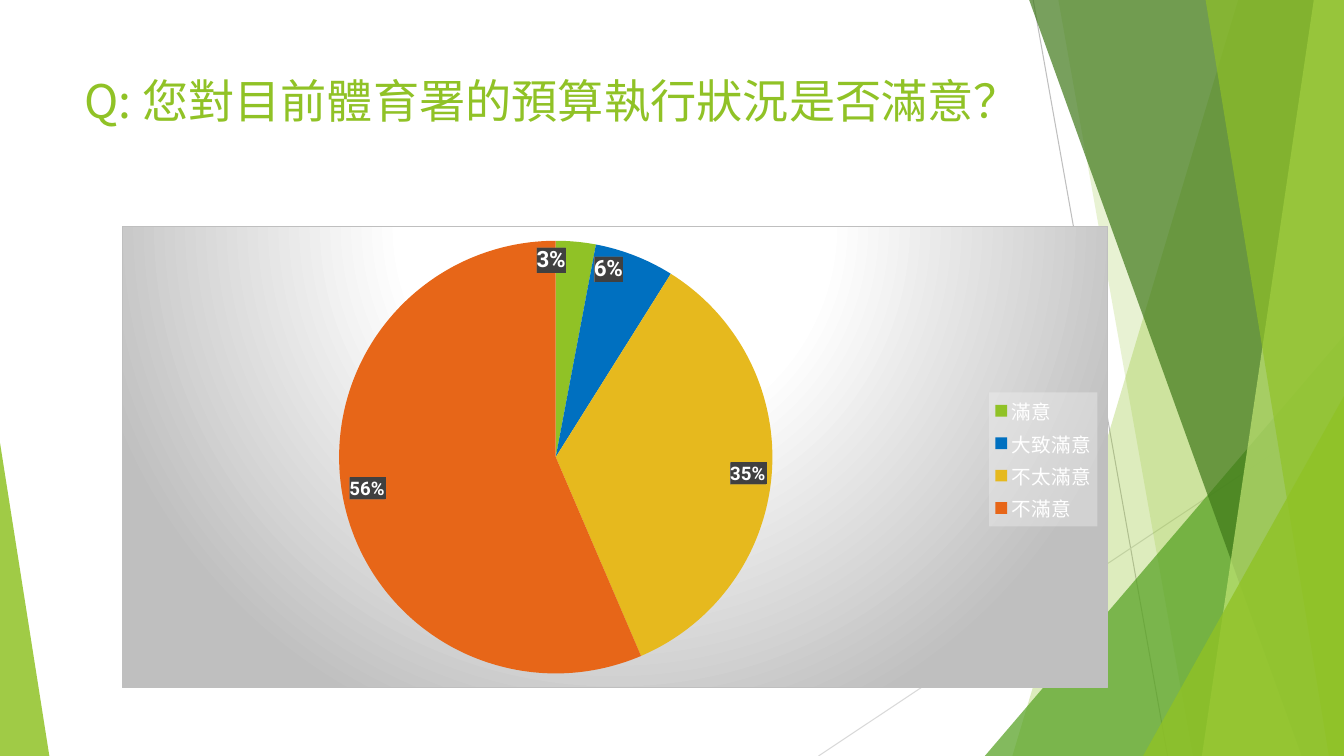
from dataclasses import dataclass

import lxml.etree
import pptx
import pptx.chart.data
import pptx.dml.color
import pptx.enum.chart
import pptx.enum.shapes
import pptx.enum.text
import pptx.oxml
import pptx.oxml.ns
import pptx.util

COLUMNS, ROWS = 40, 30
GREEN = "90C226"
LABEL_FONT = "Roboto"
TITLE_FONT = "Noto Sans CJK SC"
NAMESPACES = pptx.oxml.ns.nsdecls("c", "a")

presentation = pptx.Presentation()
presentation.slide_width = pptx.util.Inches(13.33)
presentation.slide_height = pptx.util.Inches(7.5)


@dataclass
class Ray:
    start: tuple[float, float]
    end: tuple[float, float]
    color: str


@dataclass
class Band:
    """A strip from a slanted left edge to the right side of the slide."""
    top_column: float
    bottom_column: float
    color: str
    opacity: int


@dataclass
class Corner:
    """A triangle whose tip stands at the given share of its width."""
    box: tuple[float, float, float, float]
    tip: float
    color: str
    opacity: int


@dataclass
class Answer:
    name: str
    percent: int
    color: str
    label_size: float
    label_shift: tuple[float, float] = (0, 0)


DECORATION = [
    Ray((30.75, 0), (34.75, 30), "BFBFBF"),
    Ray((40, 16.12), (24.36, 30), "D9D9D9"),
    Band(36.85, 30.13, GREEN, 30),
    Band(31.5, 35.5, GREEN, 20),
    Corner((29.31, 13.32, 10.69, 16.68), 1, "54A021", 72),
    Band(30.63, 38.74, "3F7819", 70),
    Band(39.1, 35.77, "C0E474", 70),
    Band(35.88, 39.55, GREEN, 65),
    Corner((34.02, 15.72, 5.98, 14.28), 1, GREEN, 80),
    Corner((0, 17.56, 1.47, 12.44), 0, GREEN, 85),
]
ANSWERS = [
    Answer("滿意", 3, GREEN, 16, (-0.01, 0)),
    Answer("大致滿意", 6, "0070C0", 16, (-0.01, -0.01)),
    Answer("不太滿意", 35, "E6B91E", 13.3),
    Answer("不滿意", 57, "E76618", 13.3),
]


def x(column: float) -> int:
    return round(presentation.slide_width * column / COLUMNS)


def y(row: float) -> int:
    return round(presentation.slide_height * row / ROWS)


def area(left: float, top: float, width: float, height: float) -> tuple[int, int, int, int]:
    return x(left), y(top), x(width), y(height)


def rgb(color: str) -> pptx.dml.color.RGBColor:
    return pptx.dml.color.RGBColor.from_string(color)


def fill_shape(shape, color: str, opacity: int) -> None:
    shape.shadow.inherit = False
    shape.line.fill.background()
    shape.fill.solid()
    shape.fill.fore_color.rgb = rgb(color)
    color_element = shape.fill._xPr.find(".//" + pptx.oxml.ns.qn("a:srgbClr"))
    alpha = lxml.etree.SubElement(color_element, pptx.oxml.ns.qn("a:alpha"))
    alpha.set("val", str(opacity * 1000))


def draw_ray(slide, ray: Ray) -> None:
    line = slide.shapes.add_connector(
        pptx.enum.shapes.MSO_CONNECTOR.STRAIGHT,
        x(ray.start[0]), y(ray.start[1]), x(ray.end[0]), y(ray.end[1]))
    line.line.color.rgb = rgb(ray.color)
    line.line.width = pptx.util.Pt(0.75)
    lxml.etree.SubElement(line._element.spPr, pptx.oxml.ns.qn("a:effectLst"))


def draw_band(slide, band: Band) -> None:
    builder = slide.shapes.build_freeform(x(band.top_column), 0)
    builder.add_line_segments(
        [(x(COLUMNS), 0), (x(COLUMNS), y(ROWS)), (x(band.bottom_column), y(ROWS))])
    fill_shape(builder.convert_to_shape(), band.color, band.opacity)


def draw_corner(slide, corner: Corner) -> None:
    triangle = slide.shapes.add_shape(
        pptx.enum.shapes.MSO_SHAPE.ISOSCELES_TRIANGLE, *area(*corner.box))
    triangle.adjustments[0] = corner.tip
    fill_shape(triangle, corner.color, corner.opacity)


def shape_properties(content: str):
    return pptx.oxml.parse_xml(f"<c:spPr {NAMESPACES}>{content}</c:spPr>")


def manual_layout(content: str):
    return pptx.oxml.parse_xml(
        f"<c:layout {NAMESPACES}><c:manualLayout>{content}</c:manualLayout></c:layout>")


def box_layout(left: float, top: float, width: float, height: float, target: str = ""):
    sizes = {"x": left, "y": top, "w": width, "h": height}
    modes = '<c:xMode val="edge"/><c:yMode val="edge"/>'
    return manual_layout(
        target + modes + "".join(f'<c:{key} val="{value}"/>' for key, value in sizes.items()))


def replace_layout(parent, layout, position: int) -> None:
    for old in parent.findall(pptx.oxml.ns.qn("c:layout")):
        parent.remove(old)
    parent.insert(position, layout)


def format_answer(point, answer: Answer) -> None:
    point.format.fill.solid()
    point.format.fill.fore_color.rgb = rgb(answer.color)
    label = point.data_label
    label.font.size = pptx.util.Pt(answer.label_size)
    label.font.bold = True
    label.font.name = LABEL_FONT
    label.font.color.rgb = rgb("FFFFFF")
    label.position = pptx.enum.chart.XL_LABEL_POSITION.INSIDE_END
    element = label._dLbl
    element.find(pptx.oxml.ns.qn("c:showVal")).set("val", "0")
    element.find(pptx.oxml.ns.qn("c:showPercent")).set("val", "1")
    element.find(pptx.oxml.ns.qn("c:txPr")).addprevious(shape_properties(
        '<a:pattFill prst="dkVert"><a:fgClr><a:srgbClr val="404040"/></a:fgClr>'
        '<a:bgClr><a:srgbClr val="666666"/></a:bgClr></a:pattFill>'))
    if any(answer.label_shift):
        shift_x, shift_y = answer.label_shift
        element.insert(1, manual_layout(f'<c:x val="{shift_x}"/><c:y val="{shift_y}"/>'))


def draw_chart(slide) -> None:
    data = pptx.chart.data.CategoryChartData()
    data.categories = [answer.name for answer in ANSWERS]
    data.add_series("Series 1", [answer.percent for answer in ANSWERS])
    chart = slide.shapes.add_chart(
        pptx.enum.chart.XL_CHART_TYPE.PIE, *area(3.63, 8.96, 29.34, 18.36), data).chart
    chart.has_title = False
    chart.font.name = LABEL_FONT
    chart.font.size = pptx.util.Pt(10)
    chart.plots[0].vary_by_categories = True
    for index, answer in enumerate(ANSWERS):
        format_answer(chart.plots[0].series[0].points[index], answer)

    # Legend
    chart.has_legend = True
    legend = chart.legend
    legend.position = pptx.enum.chart.XL_LEGEND_POSITION.RIGHT
    legend.include_in_layout = False
    legend.font.size = pptx.util.Pt(14)
    legend.font.name = LABEL_FONT
    legend.font.color.rgb = rgb("FFFFFF")
    replace_layout(legend._element, box_layout(0.88, 0.36, 0.11, 0.29), 1)
    legend._element.find(pptx.oxml.ns.qn("c:txPr")).addprevious(shape_properties(
        '<a:solidFill><a:srgbClr val="F2F2F2"><a:alpha val="39000"/></a:srgbClr></a:solidFill>'))

    # Pie area and chart background
    space = chart._chartSpace
    replace_layout(space.chart.plotArea, box_layout(
        0.22, 0.03, 0.44, 0.94, '<c:layoutTarget val="inner"/>'), 0)
    stops = "".join(f'<a:gs pos="{share * 1000}"><a:srgbClr val="{color}"/></a:gs>'
                    for share, color in [(0, "FFFFFF"), (39, "FFFFFF"), (100, "BFBFBF")])
    space.chart.addnext(shape_properties(
        f'<a:gradFill><a:gsLst>{stops}</a:gsLst><a:path path="circle">'
        '<a:fillToRect l="50000" t="-80000" r="50000" b="180000"/></a:path></a:gradFill>'
        '<a:ln w="9525"><a:solidFill><a:srgbClr val="BFBFBF"/></a:solidFill></a:ln>'))


def draw_title(slide) -> None:
    title = slide.shapes.title
    title.left, title.top, title.width, title.height = area(2.22, 2.68, 28.2, 5.76)
    frame = title.text_frame
    frame.text = "Q: 您對目前體育署的預算執行狀況是否滿意？"
    frame.vertical_anchor = pptx.enum.text.MSO_ANCHOR.TOP
    frame.word_wrap = True
    frame.auto_size = pptx.enum.text.MSO_AUTO_SIZE.NONE
    paragraph = frame.paragraphs[0]
    paragraph.alignment = pptx.enum.text.PP_ALIGN.LEFT
    font = paragraph.runs[0].font
    font.size = pptx.util.Pt(33)
    font.name = TITLE_FONT
    font.color.rgb = rgb(GREEN)
    east_asian = lxml.etree.SubElement(font._element, pptx.oxml.ns.qn("a:ea"))
    east_asian.set("typeface", TITLE_FONT)


def main() -> None:
    slide = presentation.slides.add_slide(presentation.slide_layouts[5])
    painters = {Ray: draw_ray, Band: draw_band, Corner: draw_corner}
    for part in DECORATION:
        painters[type(part)](slide, part)
    draw_title(slide)
    draw_chart(slide)
    presentation.save("out.pptx")


if __name__ == "__main__":
    main()
